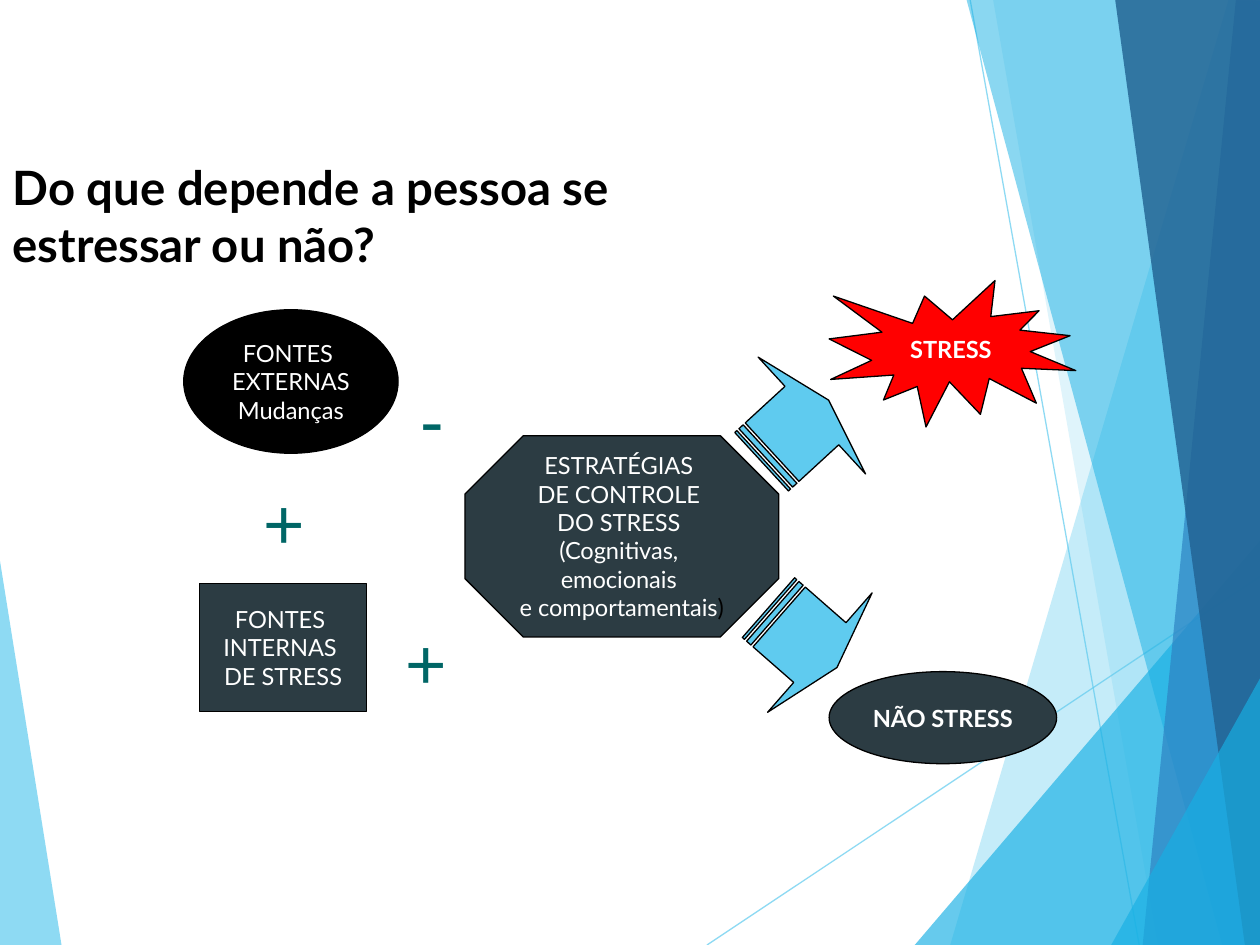
from dataclasses import dataclass

from pptx import Presentation
from pptx.dml.color import RGBColor
from pptx.enum.shapes import MSO_CONNECTOR, MSO_SHAPE
from pptx.enum.text import MSO_ANCHOR, MSO_AUTO_SIZE, PP_ALIGN
from pptx.oxml.ns import qn
from pptx.util import Pt

LINE = MSO_CONNECTOR.STRAIGHT
OVAL = MSO_SHAPE.OVAL
RECT = MSO_SHAPE.RECTANGLE
OCTAGON = MSO_SHAPE.OCTAGON
BURST = MSO_SHAPE.EXPLOSION1
ARROW = MSO_SHAPE.STRIPED_RIGHT_ARROW
TOP, MIDDLE = MSO_ANCHOR.TOP, MSO_ANCHOR.MIDDLE
LEFT, CENTER = PP_ALIGN.LEFT, PP_ALIGN.CENTER
FIXED, GROW = MSO_AUTO_SIZE.NONE, MSO_AUTO_SIZE.SHAPE_TO_FIT_TEXT


@dataclass(frozen=True)
class Theme:
    """Colours, fonts and type sizes of the slide."""
    sky: str = "5FCBEF"
    aqua: str = "17B0E4"
    blue: str = "2E83C3"
    navy: str = "226292"
    slate: str = "2C3C43"
    teal: str = "006666"
    red: str = "FF0000"
    black: str = "000000"
    white: str = "FFFFFF"
    font: str = "Lato"
    sign: str = "Arial"
    head: float = 27
    body: float = 13.5
    big: float = 40.5
    rule: float = 0.75


THEME = Theme()

FACETS = [
    (THEME.sky, 70, [(-0.7, 316), (35.3, 540.7), (-0.7, 540)]),
    (THEME.sky, 36, [(702, 0), (543, 540), (721.4, 540.7), (720.7, 0.7)]),
    (THEME.sky, 20, [(567.4, -0.7), (661.7, 540), (720.7, 540), (720.7, -0.7)]),
    (THEME.aqua, 66, [(522.7, 540), (720, 309), (720.7, 540)]),
    (THEME.aqua, 50, [(552.2, -0.7), (698.4, 540), (720.7, 540), (720.7, -0.7)]),
    (THEME.blue, 70, [(706.3, -0.7), (653, 540), (720.7, 540), (720, -0.7)]),
    (THEME.navy, 82, [(637.2, -0.7), (711.4, 540), (721.4, 540), (720, -0.7)]),
    (THEME.aqua, 66, [(635, 540), (721.4, 385.2), (721.4, 540)]),
]
RAYS = [(404, 540, 720.7, 329), (554.4, 0, 651, 540)]
NODES = [
    (OVAL, (105, 177, 122.5, 82), THEME.black, False,
     ["FONTES ", "EXTERNAS", "Mudanças"]),
    (RECT, (114, 333.5, 95.5, 73), THEME.slate, False,
     ["FONTES ", "INTERNAS ", "DE STRESS"]),
    (OCTAGON, (265.7, 249, 179.3, 115), THEME.slate, False,
     ["ESTRATÉGIAS ", "DE CONTROLE ", "DO STRESS ", "(Cognitivas, ",
      "emocionais ", "e comportamentais"]),
    (BURST, (473.8, 160.3, 141, 83.7), THEME.red, True, ["STRESS"]),
    (OVAL, (473.8, 383.8, 130, 52.6), THEME.slate, True, ["NÃO STRESS"]),
]
SIGNS = [("+", 143.3, 270), ("-", 233.3, 211), ("+", 224.6, 350)]
ARROWS = [(428.4, 200.9, 317.4), (432.7, 319, 41.2)]


def apply(item, form):
    """Set each named attribute on an item."""
    for name, value in form.items():
        setattr(item, name, value)


def place(item, box):
    """Move and size an item in points."""
    apply(item, dict(zip(("left", "top", "width", "height"), map(Pt, box))))


def fade(item, alpha):
    """Give the colours of an item an opacity in percent."""
    for color in item.element.spPr.iter(qn("a:srgbClr")):
        color.makeelement(qn("a:alpha"))
        color.append(color.makeelement(qn("a:alpha"), {"val": str(alpha * 1000)}))


def write(para, text, color, size, font=THEME.font, bold=False):
    """Add a formatted run to a paragraph."""
    run = para.add_run()
    run.text = text
    apply(run.font, {"name": font, "size": Pt(size), "bold": bold})
    run.font.color.rgb = RGBColor.from_string(color)


def paint(shape, color):
    """Give a shape a flat fill and a thin black outline."""
    shape.shadow.inherit = False
    shape.fill.solid()
    shape.fill.fore_color.rgb = RGBColor.from_string(color)
    shape.line.color.rgb = RGBColor.from_string(THEME.black)
    shape.line.width = Pt(THEME.rule)


def add_facet(slide, color, alpha, spots):
    """Draw a translucent polygon."""
    first, *rest = [(Pt(x), Pt(y)) for x, y in spots]
    pen = slide.shapes.build_freeform(*first, scale=1.0)
    pen.add_line_segments(rest, close=True)
    shape = pen.convert_to_shape()
    paint(shape, color)
    shape.line.fill.background()
    fade(shape, alpha)


def add_ray(slide, ends):
    """Draw a thin translucent line."""
    ray = slide.shapes.add_connector(LINE, *map(Pt, ends))
    ray.line.color.rgb = RGBColor.from_string(THEME.sky)
    ray.line.width = Pt(THEME.rule)
    fade(ray, 70)
    props = ray.element.spPr
    props.append(props.makeelement(qn("a:effectLst")))


def add_title(slide, text):
    """Fill and format the title placeholder."""
    title = slide.shapes.title
    place(title, (0, 87, 425.5, 68))
    frame = title.text_frame
    apply(frame, {"word_wrap": True, "auto_size": FIXED, "vertical_anchor": TOP})
    para = frame.paragraphs[0]
    para.alignment = LEFT
    write(para, text, THEME.black, THEME.head, bold=True)


def add_node(slide, kind, box, color, bold, lines):
    """Draw a shape with centred lines of text."""
    node = slide.shapes.add_shape(kind, *map(Pt, box))
    paint(node, color)
    frame = node.text_frame
    apply(frame, {"word_wrap": False, "vertical_anchor": MIDDLE})
    for rank, text in enumerate(lines):
        para = frame.add_paragraph() if rank else frame.paragraphs[0]
        para.alignment = CENTER
        write(para, text, THEME.white, THEME.body, bold=bold)
    return node


def add_sign(slide, text, left, top):
    """Write a large plus or minus sign."""
    frame = slide.shapes.add_textbox(*map(Pt, (left, top, 34, 56))).text_frame
    apply(frame, {"word_wrap": True, "auto_size": GROW})
    write(frame.paragraphs[0], text, THEME.teal, THEME.big, THEME.sign)


def add_arrow(slide, left, top, turn):
    """Draw a striped arrow turned by some degrees."""
    arrow = slide.shapes.add_shape(ARROW, *map(Pt, (left, top, 52, 90.7)))
    paint(arrow, THEME.sky)
    arrow.adjustments[0], arrow.adjustments[1] = 0.5, 0.25
    arrow.rotation = turn


def main():
    """Build and save the slide."""
    deck = Presentation()
    apply(deck, {"slide_width": Pt(720), "slide_height": Pt(540)})
    slide = deck.slides.add_slide(deck.slide_layouts[5])
    add_title(slide, "Do que depende a pessoa se estressar ou não?")
    add_facet(slide, *FACETS[0])
    for ends in RAYS:
        add_ray(slide, ends)
    for facet in FACETS[1:]:
        add_facet(slide, *facet)
    nodes = [add_node(slide, *node) for node in NODES]
    octagon = nodes[2]
    octagon.adjustments[0] = 0.29
    write(octagon.text_frame.paragraphs[-1], ")", THEME.black, THEME.body)
    for sign in SIGNS:
        add_sign(slide, *sign)
    for arrow in ARROWS:
        add_arrow(slide, *arrow)
    deck.save("out.pptx")


if __name__ == "__main__":
    main()
